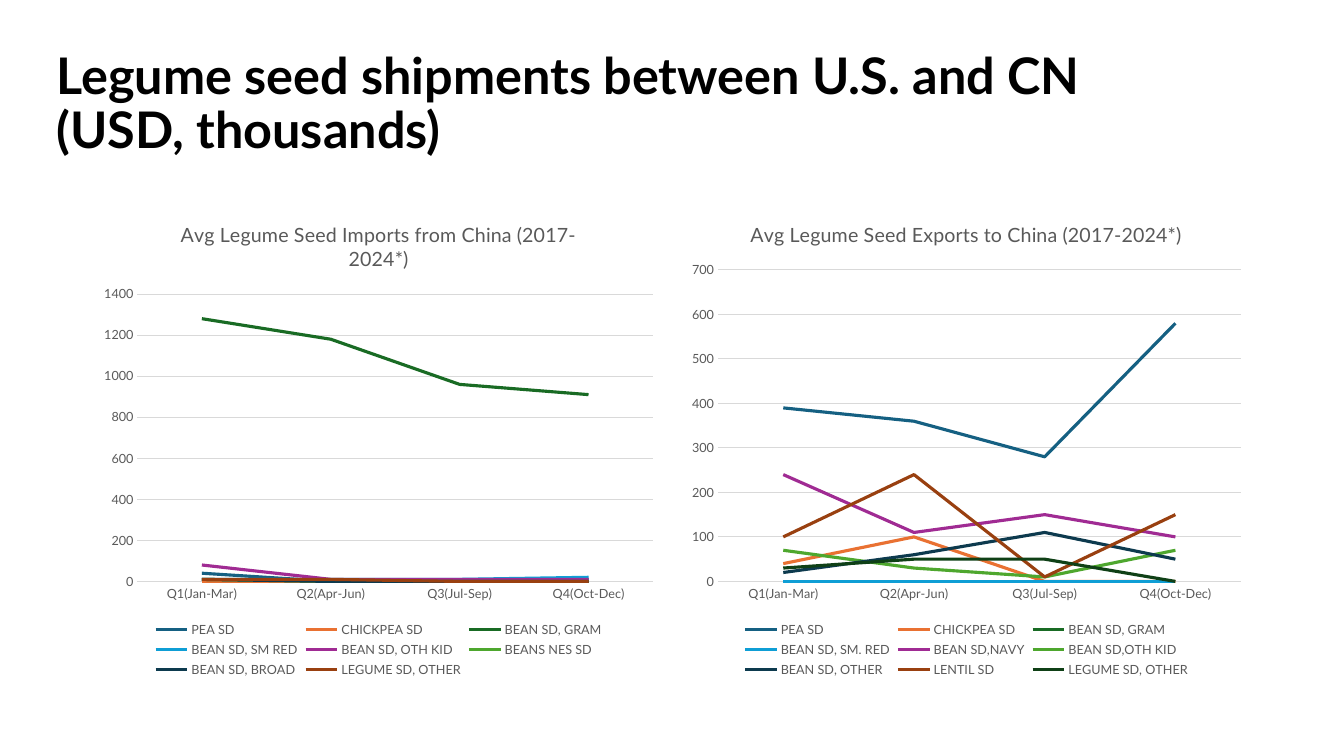
import pptx
import pptx.chart.data
import pptx.dml.color
import pptx.enum.chart
import pptx.enum.text
import pptx.util

THEME = {
    "font": "Lato",
    "ink": "000000",
    "muted": "595959",
    "rule": "D9D9D9",
    "series": ["156082", "E97132", "196B24", "0F9ED5", "A02B93",
               "4EA72E", "0D3A4E", "994010", "0F4016"],
    "heading_size": 36,
    "chart_title_size": 14,
    "label_size": 9,
    "rule_width": 0.75,
    "series_width": 2.25,
}
SLIDE_WIDTH = pptx.util.Inches(13.33)
SLIDE_HEIGHT = pptx.util.Inches(7.5)

HEADING = ["Legume seed shipments between U.S. and CN", "(USD, thousands)"]
QUARTERS = ["Q1(Jan-Mar)", "Q2(Apr-Jun)", "Q3(Jul-Sep)", "Q4(Oct-Dec)"]
CHARTS = [
    {
        "title": "Avg Legume Seed Imports from China (2017-2024*)",
        "scale": {"minimum_scale": 0, "maximum_scale": 1400, "major_unit": 200},
        "series": {
            "PEA SD": [40, 0, 0, 10],
            "CHICKPEA SD": [0, 0, 0, 0],
            "BEAN SD, GRAM": [1280, 1180, 960, 910],
            "BEAN SD, SM RED": [10, 10, 10, 20],
            "BEAN SD, OTH KID": [80, 10, 10, 10],
            "BEANS NES SD": [10, 0, 0, 0],
            "BEAN SD, BROAD": [10, 0, 0, 0],
            "LEGUME SD, OTHER": [10, 10, 0, 0],
        },
    },
    {
        "title": "Avg Legume Seed Exports to China (2017-2024*)",
        "scale": {"minimum_scale": 0, "maximum_scale": 700, "major_unit": 100},
        "series": {
            "PEA SD": [390, 360, 280, 580],
            "CHICKPEA SD": [40, 100, 0, 0],
            "BEAN SD, GRAM": [0, 0, 0, 0],
            "BEAN SD, SM. RED": [0, 0, 0, 0],
            "BEAN SD,NAVY": [240, 110, 150, 100],
            "BEAN SD,OTH KID": [70, 30, 10, 70],
            "BEAN SD, OTHER": [20, 60, 110, 50],
            "LENTIL SD": [100, 240, 10, 150],
            "LEGUME SD, OTHER": [30, 50, 50, 0],
        },
    },
]


def area(left, top, width, height):
    """Turn inches on the 13.33 by 7.5 slide into a position and size."""
    return [pptx.util.Inches(length) for length in (left, top, width, height)]


def set_all(target, values):
    for name, value in values.items():
        setattr(target, name, value)


def style_font(font, size, color, bold=False):
    set_all(font, {"name": THEME["font"], "size": pptx.util.Pt(size), "bold": bold})
    font.color.rgb = pptx.dml.color.RGBColor.from_string(color)


def style_line(line, color, width):
    line.color.rgb = pptx.dml.color.RGBColor.from_string(color)
    line.width = pptx.util.Pt(width)


def add_heading(page, lines, place):
    frame = page.shapes.add_textbox(*place).text_frame
    set_all(frame, {"word_wrap": True,
                    "vertical_anchor": pptx.enum.text.MSO_ANCHOR.MIDDLE})
    frame.text = "\n".join(lines)
    for para in frame.paragraphs:
        para.line_spacing = 0.9
        style_font(para.runs[0].font, THEME["heading_size"], THEME["ink"], bold=True)


def style_axes(chart, scale):
    no_tick = pptx.enum.chart.XL_TICK_MARK.NONE
    for axis in (chart.category_axis, chart.value_axis):
        set_all(axis, {"major_tick_mark": no_tick, "minor_tick_mark": no_tick})
        style_font(axis.tick_labels.font, THEME["label_size"], THEME["muted"])
    set_all(chart.value_axis, {"has_major_gridlines": True, **scale})
    chart.value_axis.format.line.fill.background()
    for line in (chart.category_axis.format.line,
                 chart.value_axis.major_gridlines.format.line):
        style_line(line, THEME["rule"], THEME["rule_width"])


def add_line_chart(page, content, place):
    data = pptx.chart.data.CategoryChartData(number_format="General")
    data.categories = QUARTERS
    for name, values in content["series"].items():
        data.add_series(name, values)
    chart = page.shapes.add_chart(
        pptx.enum.chart.XL_CHART_TYPE.LINE, *place, data).chart
    style_font(chart.font, 10, THEME["ink"])
    set_all(chart, {"has_title": True, "has_legend": True})
    chart.plots[0].vary_by_categories = False

    title = chart.chart_title
    title.include_in_layout = False
    title.text_frame.text = content["title"]
    style_font(title.text_frame.paragraphs[0].runs[0].font,
               THEME["chart_title_size"], THEME["muted"])

    set_all(chart.legend, {
        "position": pptx.enum.chart.XL_LEGEND_POSITION.BOTTOM,
        "include_in_layout": False})
    style_font(chart.legend.font, THEME["label_size"], THEME["muted"])
    style_axes(chart, content["scale"])

    for series, color in zip(chart.plots[0].series, THEME["series"]):
        series.smooth = False
        series.marker.style = pptx.enum.chart.XL_MARKER_STYLE.NONE
        style_line(series.format.line, color, THEME["series_width"])


def main():
    deck = pptx.Presentation()
    set_all(deck, {"slide_width": SLIDE_WIDTH, "slide_height": SLIDE_HEIGHT})
    page = deck.slides.add_slide(deck.slide_layouts[6])
    add_heading(page, HEADING, area(0.46, 0.32, 11.5, 1.45))
    chart_left, chart_pitch = 0.92, 5.83
    for column, content in enumerate(CHARTS):
        add_line_chart(page, content,
                       area(chart_left + column * chart_pitch, 2, 5.67, 4.76))
    deck.save("out.pptx")


if __name__ == "__main__":
    main()
